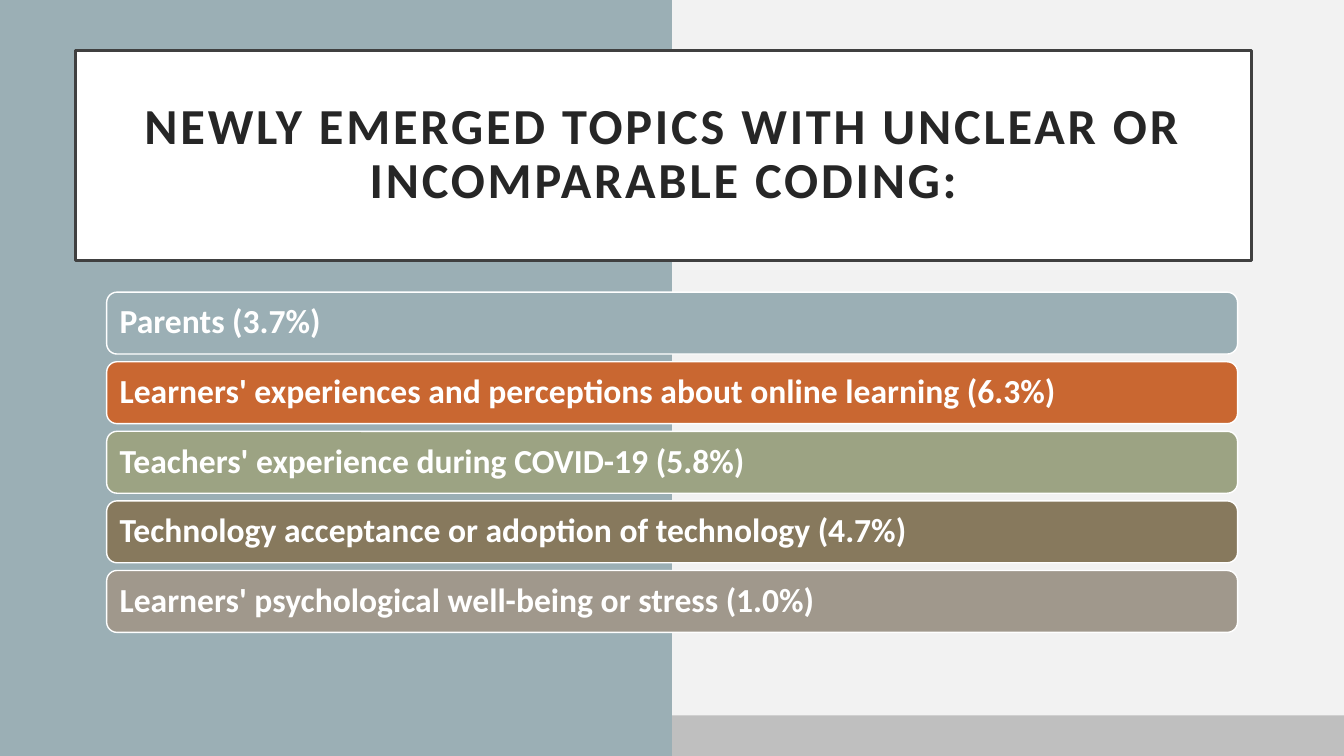
import dataclasses

import pptx
import pptx.dml.color
import pptx.enum.shapes
import pptx.enum.text
import pptx.util


@dataclasses.dataclass(frozen=True)
class Theme:
    font: str = "Calibri"
    title_size: int = 36
    topic_size: int = 24
    backdrop: str = "F2F2F2"
    footer: str = "BFBFBF"
    left_half: str = "9BAFB5"
    white: str = "FFFFFF"
    title_border: str = "404040"
    title_text: str = "262626"
    topic_fills: tuple = ("9BAFB5", "C96731", "9CA383", "87795D", "A0988C")


theme = Theme()
Pt = pptx.util.Pt
rgb = pptx.dml.color.RGBColor.from_string
shape_kinds = pptx.enum.shapes.MSO_SHAPE
alignments = pptx.enum.text.PP_ALIGN

presentation = pptx.Presentation()
presentation.slide_width = Pt(960)
presentation.slide_height = Pt(540)
slide = presentation.slides.add_slide(presentation.slide_layouts[6])
slide.background.fill.solid()
slide.background.fill.fore_color.rgb = rgb(theme.backdrop)


def add_panel(kind, left, top, width, height, fill, border=None, border_width=1):
    panel = slide.shapes.add_shape(kind, Pt(left), Pt(top), Pt(width), Pt(height))
    panel.shadow.inherit = False
    panel.fill.solid()
    panel.fill.fore_color.rgb = rgb(fill)
    if border:
        panel.line.color.rgb = rgb(border)
        panel.line.width = Pt(border_width)
    else:
        panel.line.fill.background()
    return panel


def write_text(panel, text, *, size, color, align, inset, tracking=0):
    frame = panel.text_frame
    frame.word_wrap = True
    frame.vertical_anchor = pptx.enum.text.MSO_ANCHOR.MIDDLE
    frame.margin_left = frame.margin_right = Pt(inset)
    frame.margin_top = frame.margin_bottom = Pt(inset)
    paragraph = frame.paragraphs[0]
    paragraph.alignment = align
    paragraph.line_spacing = 0.9
    run = paragraph.add_run()
    run.text = text
    run.font.name = theme.font
    run.font.size = Pt(size)
    run.font.bold = True
    run.font.color.rgb = rgb(color)
    if tracking:
        run._r.get_or_add_rPr().set("spc", str(tracking * 100))


add_panel(shape_kinds.RECTANGLE, 0, 511, 960, 29, theme.footer)
add_panel(shape_kinds.RECTANGLE, 0, 0, 480, 540, theme.left_half)

title = add_panel(shape_kinds.RECTANGLE, 54, 36, 840, 150, theme.white,
                  border=theme.title_border, border_width=2.5)
write_text(title, "NEWLY EMERGED TOPICS WITH UNCLEAR OR INCOMPARABLE CODING:",
           size=theme.title_size, color=theme.title_text,
           align=alignments.CENTER, inset=14.4, tracking=2)

topics = [
    "Parents (3.7%)",
    "Learners' experiences and perceptions about online learning (6.3%)",
    "Teachers' experience during COVID-19 (5.8%)",
    "Technology acceptance or adoption of technology (4.7%)",
    "Learners' psychological well-being or stress (1.0%)",
]
first_topic_top = 208.7
topic_pitch = 49.7

for position, (topic, topic_fill) in enumerate(zip(topics, theme.topic_fills)):
    topic_bar = add_panel(shape_kinds.ROUNDED_RECTANGLE, 76.2,
                          first_topic_top + position * topic_pitch, 807.8, 44.2,
                          topic_fill, border=theme.white)
    write_text(topic_bar, topic, size=theme.topic_size, color=theme.white,
               align=alignments.LEFT, inset=7.2)

presentation.save("out.pptx")
